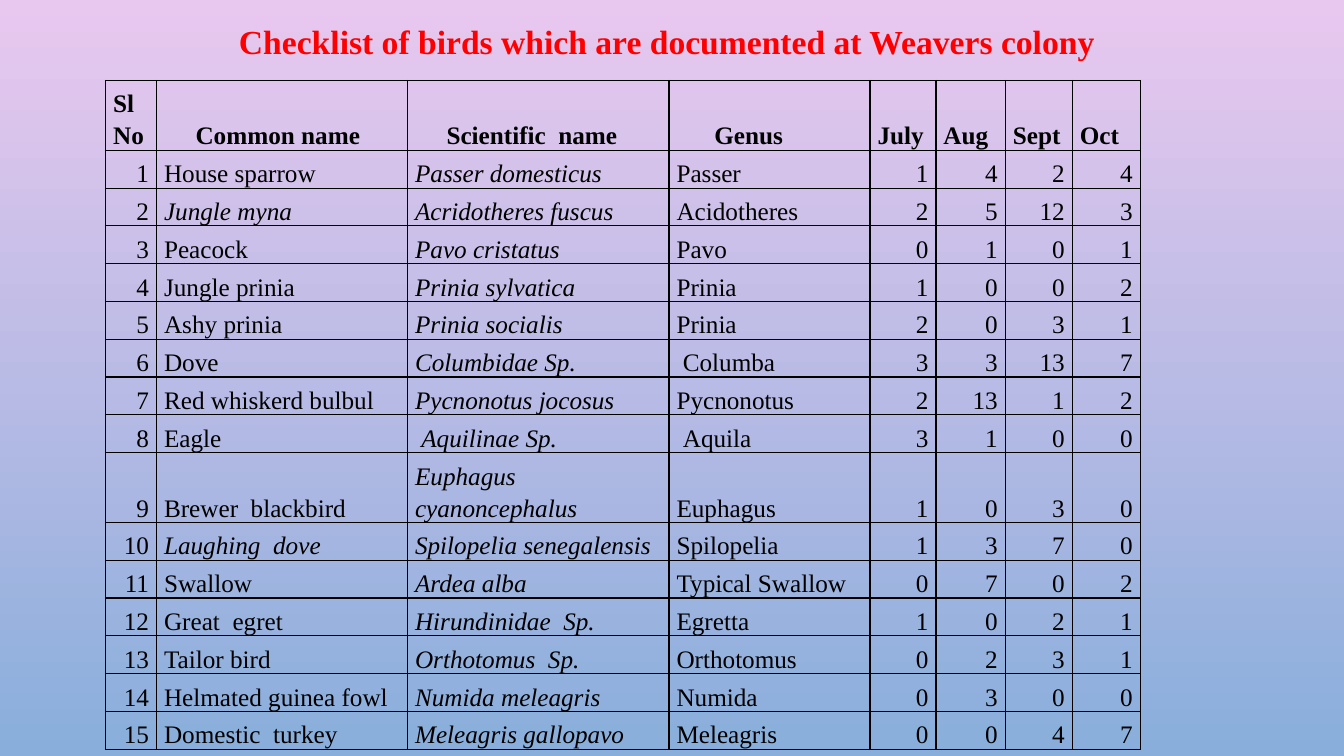
import dataclasses

import lxml.etree
import pptx
import pptx.dml.color
import pptx.enum.text
import pptx.oxml.ns
import pptx.util

Pt = pptx.util.Pt
ALIGN = pptx.enum.text.PP_ALIGN
ANCHOR = pptx.enum.text.MSO_ANCHOR

TITLE = "Checklist of birds which are documented at Weavers colony"
HEADINGS = ("Sl No", "Common name", "Scientific  name", "Genus", "July", "Aug", "Sept", "Oct")
BIRDS = (
    ("House sparrow", "Passer domesticus", "Passer", 1, 4, 2, 4),
    ("Jungle myna", "Acridotheres fuscus", "Acidotheres", 2, 5, 12, 3),
    ("Peacock", "Pavo cristatus", "Pavo", 0, 1, 0, 1),
    ("Jungle prinia", "Prinia sylvatica", "Prinia", 1, 0, 0, 2),
    ("Ashy prinia", "Prinia socialis", "Prinia", 2, 0, 3, 1),
    ("Dove", "Columbidae Sp.", "Columba", 3, 3, 13, 7),
    ("Red whiskerd bulbul", "Pycnonotus jocosus", "Pycnonotus", 2, 13, 1, 2),
    ("Eagle", "Aquilinae Sp.", "Aquila", 3, 1, 0, 0),
    ("Brewer  blackbird", "Euphagus cyanoncephalus", "Euphagus", 1, 0, 3, 0),
    ("Laughing  dove", "Spilopelia senegalensis", "Spilopelia", 1, 3, 7, 0),
    ("Swallow", "Ardea alba", "Typical Swallow", 0, 7, 0, 2),
    ("Great  egret", "Hirundinidae  Sp.", "Egretta", 1, 0, 2, 1),
    ("Tailor bird", "Orthotomus  Sp.", "Orthotomus", 0, 2, 3, 1),
    ("Helmated guinea fowl", "Numida meleagris", "Numida", 0, 3, 0, 0),
    ("Domestic  turkey", "Meleagris gallopavo", "Meleagris", 0, 0, 4, 7),
)
COLUMN_WIDTHS = (36.4, 179.3, 186.8, 143.6, 47.1, 49.6, 47.9, 48.5)
ROW_HEIGHT, TALL_ROW_HEIGHT = 27, 50
TALL_ROWS = (0, 9)
SCIENTIFIC_COLUMN = 2
ITALIC_COMMON_NAMES = ("Jungle myna", "Laughing  dove")
INDENTS = {
    "Common name": 22.5,
    "Scientific  name": 22.5,
    "Genus": 27,
    "Columba": 4.5,
    "Aquilinae Sp.": 4.5,
    "Aquila": 4.5,
}


@dataclasses.dataclass(frozen=True)
class Theme:
    font: str = "Times New Roman"
    title_size: float = 24
    table_size: float = 18
    title_color: str = "FF0000"
    text_color: str = "000000"
    border_color: str = "000000"
    border_width: float = 1
    cell_margin: float = 5.4
    line_spacing: float = 1.15
    background: tuple = ("E9C8EF", "89AEDB")


class SlideBuilder:
    """Draw the elements of one slide in a shared style."""

    def __init__(self, slide, theme):
        self.slide = slide
        self.theme = theme

    def apply(self, target, formats):
        for name, value in formats.items():
            setattr(target, name, value)

    def format_font(self, font, size, color, bold=False, italic=False):
        self.apply(font, {"name": self.theme.font, "size": Pt(size), "bold": bold, "italic": italic})
        font.color.rgb = pptx.dml.color.RGBColor.from_string(color)

    def background(self):
        fill = self.slide.background.fill
        fill.gradient()
        fill.gradient_angle = 270
        for stop, color in zip(fill.gradient_stops, self.theme.background):
            stop.color.rgb = pptx.dml.color.RGBColor.from_string(color)

    def title(self, text, left, top, width, height):
        shape = self.slide.shapes.title
        self.apply(shape, {"left": Pt(left), "top": Pt(top), "width": Pt(width), "height": Pt(height)})
        frame = shape.text_frame
        frame.text = text
        self.apply(frame, {
            "word_wrap": False,
            "auto_size": pptx.enum.text.MSO_AUTO_SIZE.SHAPE_TO_FIT_TEXT,
            "vertical_anchor": ANCHOR.MIDDLE,
        })
        paragraph = frame.paragraphs[0]
        paragraph.alignment = ALIGN.CENTER
        self.format_font(paragraph.runs[0].font, self.theme.title_size, self.theme.title_color, bold=True)

    def borders(self, cell):
        properties = cell._tc.get_or_add_tcPr()
        qualify = pptx.oxml.ns.qn
        for side in ("a:lnL", "a:lnR", "a:lnT", "a:lnB"):
            line = lxml.etree.SubElement(properties, qualify(side), w=str(Pt(self.theme.border_width)))
            fill = lxml.etree.SubElement(line, qualify("a:solidFill"))
            lxml.etree.SubElement(fill, qualify("a:srgbClr"), val=self.theme.border_color)

    def cell(self, cell, value, bold, italic):
        self.borders(cell)
        cell.fill.background()
        margin = self.theme.cell_margin
        self.apply(cell, {
            "text": str(value),
            "vertical_anchor": ANCHOR.BOTTOM,
            "margin_left": Pt(margin + INDENTS.get(value, 0)),
            "margin_right": Pt(margin),
            "margin_top": 0,
            "margin_bottom": 0,
        })
        paragraph = cell.text_frame.paragraphs[0]
        self.apply(paragraph, {
            "line_spacing": self.theme.line_spacing,
            "alignment": ALIGN.RIGHT if isinstance(value, int) else ALIGN.LEFT,
        })
        self.format_font(paragraph.runs[0].font, self.theme.table_size, self.theme.text_color, bold, italic)

    def table(self, rows, left, top):
        heights = [TALL_ROW_HEIGHT if index in TALL_ROWS else ROW_HEIGHT for index in range(len(rows))]
        table = self.slide.shapes.add_table(
            len(rows), len(COLUMN_WIDTHS), Pt(left), Pt(top), Pt(sum(COLUMN_WIDTHS)), Pt(sum(heights))
        ).table
        self.apply(table, {"first_row": False, "horz_banding": False})
        for column, width in zip(table.columns, COLUMN_WIDTHS):
            column.width = Pt(width)
        for row, height in zip(table.rows, heights):
            row.height = Pt(height)
        for row_index, values in enumerate(rows):
            heading = row_index == 0
            for column_index, value in enumerate(values):
                scientific = column_index == SCIENTIFIC_COLUMN and not heading
                italic = scientific or value in ITALIC_COMMON_NAMES
                self.cell(table.cell(row_index, column_index), value, heading, italic)


def main():
    presentation = pptx.Presentation()
    presentation.slide_width = Pt(960)
    presentation.slide_height = Pt(540)
    slide = presentation.slides.add_slide(presentation.slide_layouts.get_by_name("Title Only"))
    builder = SlideBuilder(slide, Theme())
    builder.background()
    builder.title(TITLE, 160.5, 11, 631.5, 36)
    numbered_birds = [(number, *bird) for number, bird in enumerate(BIRDS, 1)]
    builder.table([HEADINGS, *numbered_birds], 75.4, 57.4)
    presentation.save("out.pptx")


if __name__ == "__main__":
    main()
